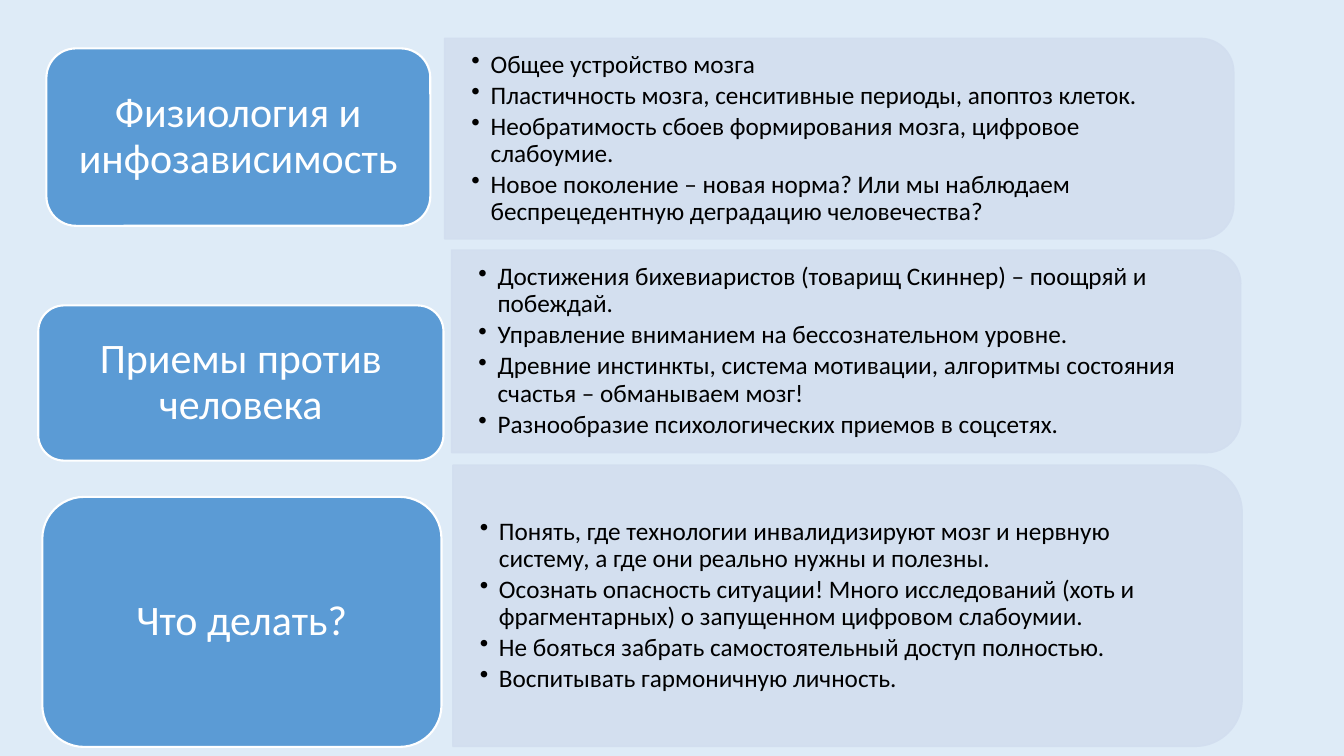
"""Build a slide of three topics, each a label beside a panel of bullet points."""
from lxml.etree import SubElement
from pptx import Presentation
from pptx.dml.color import RGBColor
from pptx.enum.shapes import MSO_SHAPE as Preset
from pptx.enum.text import MSO_ANCHOR as Anchor, PP_ALIGN as Align
from pptx.oxml.ns import qn
from pptx.util import Inches, Pt


def paint(fill, colour, opacity=100):
    fill.solid()
    fill.fore_color.rgb = RGBColor.from_string(colour)
    if opacity < 100:
        tint = fill.fore_color._xFill[0]
        SubElement(tint, qn("a:alpha")).set("val", str(opacity * 1000))


def write(area, lines, style):
    frame = page.shapes.add_textbox(*map(round, area)).text_frame
    for name, value in style["frame"].items():
        setattr(frame, name, value)
    for number, line in enumerate(lines):
        para = frame.add_paragraph() if number else frame.paragraphs[0]
        for name, value in style["para"].items():
            setattr(para, name, value)
        if style["bullet"]:
            props = para._p.get_or_add_pPr()
            props.set("marL", str(Inches(0.19)))
            props.set("indent", str(-Inches(0.19)))
            SubElement(props, qn("a:buChar")).set("char", style["bullet"])
        span = para.add_run()
        span.text = line
        span.font.name = "Calibri"
        span.font.size = style["size"]
        paint(span.font.fill, style["colour"])


deck = Presentation()
deck.slide_width, deck.slide_height = Inches(13.33), Inches(7.5)
page = deck.slides.add_slide(deck.slide_layouts[6])
paint(page.background.fill, "DEEBF7")
column, row = deck.slide_width / 100, deck.slide_height / 100
panel_width = 58.72 * column
inset = 0.05

point_style = {
    "frame": {"word_wrap": True, "vertical_anchor": Anchor.MIDDLE,
              "margin_left": 2 * column, "margin_right": 2 * column,
              "margin_top": 1.87 * row, "margin_bottom": 1.87 * row},
    "para": {"level": 1, "alignment": Align.LEFT, "line_spacing": 0.9,
             "space_after": Pt(2.7)},
    "bullet": "•", "size": Pt(18), "colour": "000000",
}
label_style = {
    "frame": {"word_wrap": True, "vertical_anchor": Anchor.MIDDLE,
              "margin_left": 0.9 * column, "margin_right": 0.9 * column,
              "margin_top": 0.8 * row, "margin_bottom": 0.8 * row},
    "para": {"alignment": Align.CENTER, "line_spacing": 0.9,
             "space_after": Pt(10.5)},
    "bullet": None, "size": Pt(30), "colour": "FFFFFF",
}
for style in (point_style, label_style):
    for name in ("margin_left", "margin_right", "margin_top", "margin_bottom"):
        style["frame"][name] = round(style["frame"][name])

topics = [
    ("Физиология и инфозависимость", (3.45, 6.4, 28.57, 23.47), (33.08, 5.07, 26.53), [
        "Общее устройство мозга",
        "Пластичность мозга, сенситивные периоды, апоптоз клеток.",
        "Необратимость сбоев формирования мозга, цифровое слабоумие.",
        "Новое поколение – новая норма? Или мы наблюдаем беспрецедентную деградацию человечества?",
    ]),
    ("Приемы против человека", (2.85, 40.4, 30.15, 20.53), (33.6, 33.07, 26.8), [
        "Достижения бихевиаристов (товарищ Скиннер) – поощряй и побеждай.",
        "Управление вниманием на бессознательном уровне.",
        "Древние инстинкты, система мотивации, алгоритмы состояния счастья – обманываем мозг!",
        "Разнообразие психологических приемов в соцсетях.",
    ]),
    ("Что делать?", (3.15, 65.73, 29.7, 33.07), (33.7, 61.53, 37.2), [
        "Понять, где технологии инвалидизируют мозг и нервную систему, "
        "а где они реально нужны и полезны.",
        "Осознать опасность ситуации! Много исследований (хоть и фрагментарных) "
        "о запущенном цифровом слабоумии.",
        "Не бояться забрать самостоятельный доступ полностью.",
        "Воспитывать гармоничную личность.",
    ]),
]

for title, label_cells, panel_cells, points in topics:
    left, top, height = panel_cells[0] * column, panel_cells[1] * row, panel_cells[2] * row
    shift = (panel_width - height) / 2
    panel = page.shapes.add_shape(
        Preset.ROUND_2_SAME_RECTANGLE,
        *map(round, (left + shift, top - shift, height, panel_width)))
    panel.rotation = 90
    panel.shadow.inherit = False
    paint(panel.fill, "D2DEEF", 90)
    paint(panel.line.fill, "D2DEEF", 90)
    panel.line.width = Pt(1)
    gap = inset * height
    write((left, top + gap, panel_width - gap, height - 2 * gap), points, point_style)

    left, top, width, height = (
        cells * unit for cells, unit in zip(label_cells, (column, row) * 2))
    label = page.shapes.add_shape(
        Preset.ROUNDED_RECTANGLE, *map(round, (left, top, width, height)))
    label.shadow.inherit = False
    paint(label.fill, "5B9BD5")
    paint(label.line.fill, "FFFFFF")
    label.line.width = Pt(1.5)
    gap = inset * height
    write((left + gap, top + gap, width - 2 * gap, height - 2 * gap), [title], label_style)

deck.save("out.pptx")
